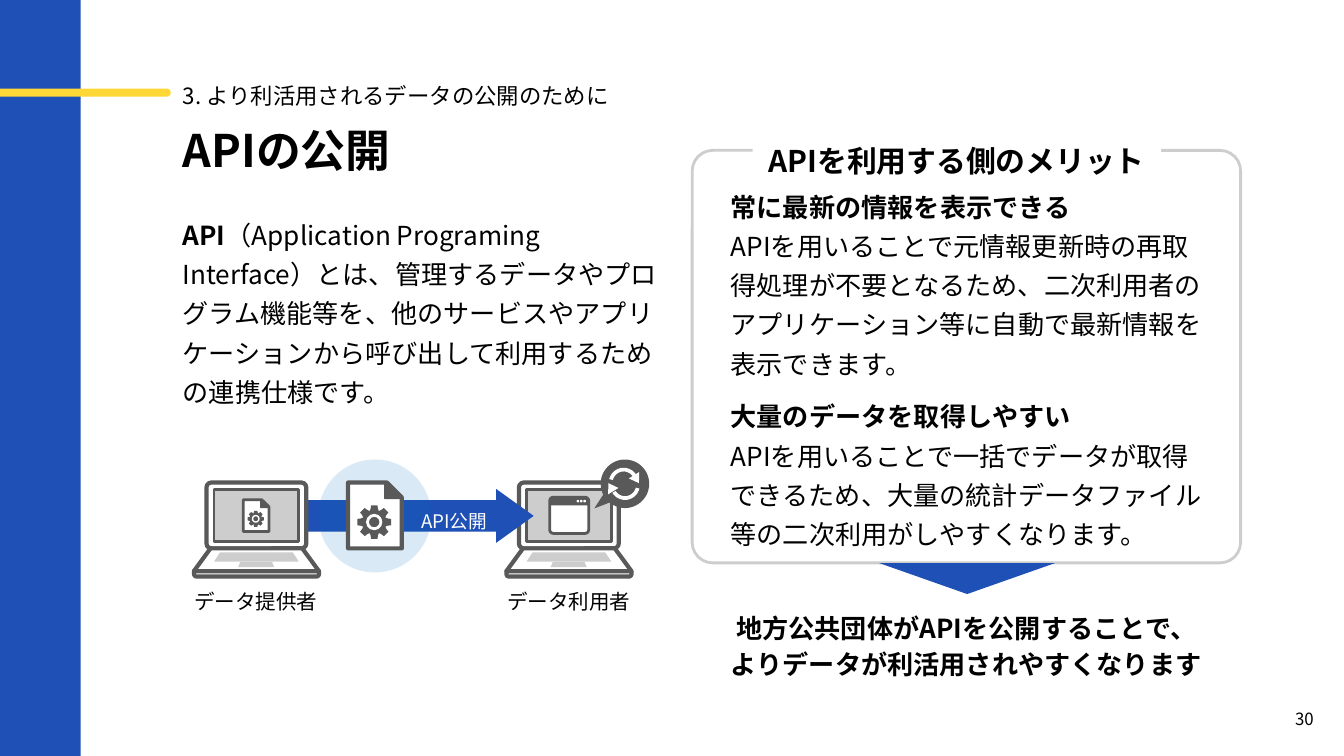
from lxml import etree
from pptx import Presentation
from pptx.dml.color import RGBColor
from pptx.enum import shapes, text
from pptx.oxml.ns import qn
from pptx.util import Pt

BLUE = RGBColor(0x1E, 0x50, 0xB5)
SKY = RGBColor(0x00, 0x70, 0xC0)
GOLD = RGBColor(0xFF, 0xD7, 0x37)
DARK = RGBColor(0x59, 0x59, 0x59)
GREY = RGBColor(0xCD, 0xCD, 0xCD)
WHITE = RGBColor(0xFF, 0xFF, 0xFF)
BLACK = RGBColor(0, 0, 0)
FONT = "Noto Sans CJK JP"

KIND = shapes.MSO_SHAPE
MID = text.MSO_ANCHOR.MIDDLE
LEFT, MIDX = text.PP_ALIGN.LEFT, text.PP_ALIGN.CENTER

PAGE = "30"
CHAPTER = "3. より利活用されるデータの公開のために"
TITLE = "APIの公開"
INTRO = [[("API", True), ("（Application Programing Interface）とは、管理するデータやプログラム機能等を、他のサービスやアプリケーションから呼び出して利用するための連携仕様です。", False)]]
HEAD = "APIを利用する側のメリット"
MERITS = [
    (98.2, "常に最新の情報を表示できる",
     "APIを用いることで元情報更新時の再取得処理が不要となるため、二次利用者のアプリケーション等に自動で最新情報を表示できます。"),
    (210.5, "大量のデータを取得しやすい",
     "APIを用いることで一括でデータが取得できるため、大量の統計データファイル等の二次利用がしやすくなります。"),
]
RESULT = "地方公共団体がAPIを公開することで、\vよりデータが利活用されやすくなります"
LABELS = [(88.5, 97.2, "データ提供者"), (271.3, 67, "データ利用者")]

LAPTOP = [
    (KIND.ROUNDED_RECTANGLE, (6.7, 0, 53.5, 35.3), WHITE, 2.25, [0.074], 0),
    (KIND.TRAPEZOID, (0, 35.3, 67, 12.2), WHITE, 2.25, [0.731], 0),
    (KIND.ROUND_2_SAME_RECTANGLE, (0, 47.5, 67, 2.9), WHITE, 2.25, [0.472, 0], 180),
    (KIND.TRAPEZOID, (10.8, 37.4, 45.4, 5), GREY, 0, [0.651], 0),
    (KIND.RECTANGLE, (10.8, 3.6, 45.4, 28), GREY, 1.5, [], 0),
    (KIND.TRAPEZOID, (23.7, 42.5, 19.4, 2.9), GREY, 0, [0.412], 0),
]
ARC = [121.49, 202.98, 0.126]
CYCLE = [
    (KIND.BLOCK_ARC, (326.9, 252, 15.8, 15.8), ARC, 170.5),
    (KIND.ISOSCELES_TRIANGLE, (324, 258.5, 6.5, 5), [], 328.4),
    (KIND.BLOCK_ARC, (326.2, 250.6, 15.8, 15.8), ARC, 350.5),
    (KIND.ISOSCELES_TRIANGLE, (337.7, 254.2, 6.5, 5), [], 148.3),
]

deck = Presentation()
deck.slide_width, deck.slide_height = Pt(720), Pt(405)
slide = deck.slides.add_slide(deck.slide_layouts[6])


def draw(kind, box, fill=None, width=0, adj=(), turn=0, edge=DARK):
    shape = slide.shapes.add_shape(kind, *[Pt(v) for v in box])
    shape.shadow.inherit = False
    shape.rotation = turn
    for i, value in enumerate(adj):
        shape.adjustments[i] = value
    if fill is None:
        shape.fill.background()
    else:
        shape.fill.solid()
        shape.fill.fore_color.rgb = fill
    if width:
        shape.line.color.rgb = edge
        shape.line.width = Pt(width)
    else:
        shape.line.fill.background()
    return shape


def write(box, paras, size, bold=False, align=LEFT, space=None,
          anchor=text.MSO_ANCHOR.TOP, color=BLACK, fill=None):
    label = slide.shapes.add_textbox(*[Pt(v) for v in box])
    if fill is not None:
        label.fill.solid()
        label.fill.fore_color.rgb = fill
    frame = label.text_frame
    frame.word_wrap = True
    frame.vertical_anchor = anchor
    frame.margin_left = frame.margin_right = 0
    frame.margin_top = frame.margin_bottom = 0
    if isinstance(paras, str):
        paras = [paras]
    for i, words in enumerate(paras):
        para = frame.add_paragraph() if i else frame.paragraphs[0]
        para.alignment = align
        if space:
            para.line_spacing = space
        font = para.font
        font.name, font.size = FONT, Pt(size)
        font.color.rgb = color
        if isinstance(words, str):
            font.bold = bold
            para.text = words
        else:
            for part, heavy in words:
                run = para.add_run()
                run.text = part
                run.font.bold = heavy
        base = para._p.pPr.find(qn("a:defRPr"))
        etree.SubElement(base, qn("a:ea"), typeface=FONT)


def laptop(left, top=258.5):
    for kind, (x, y, w, h), fill, width, adj, turn in LAPTOP:
        draw(kind, (left + x, top + y, w, h), fill, width, adj, turn)


def sheet(left, top, scale, lines):
    def place(x, y, w, h):
        return left + x * scale, top + y * scale, w * scale, h * scale

    draw(KIND.SNIP_1_RECTANGLE, place(0, 0, 28.8, 35.3), WHITE, lines[0], [0.278])
    draw(KIND.RIGHT_TRIANGLE, place(19.6, 0, 8.6, 8.6), DARK, lines[1])
    for turn in (0, 45):
        draw(KIND.PLAQUE, place(5, 12.2, 18, 18), DARK, 0, [0.405], turn)
    draw(KIND.OVAL, place(10.4, 17.6, 7.2, 7.2), DARK, lines[2], edge=WHITE)


draw(KIND.RECTANGLE, (0, 0, 43.2, 405), BLUE)
draw(KIND.ROUNDED_RECTANGLE, (-8, 47.5, 99.5, 4.3), GOLD, 0, [0.5])

laptop(271.3)
draw(KIND.OVAL, (321.8, 246.2, 26, 26), DARK)
draw(KIND.ISOSCELES_TRIANGLE, (319, 264.2, 6.5, 10), DARK, turn=231.1)
draw(KIND.ROUNDED_RECTANGLE, (294.5, 266.4, 20.9, 19.4), WHITE, 1.5, [0.099])
draw(KIND.ROUND_2_SAME_RECTANGLE, (294.5, 266.4, 20.9, 4.3), DARK, 0, [0.458, 0])
for i in range(3):
    draw(KIND.OVAL, (308.9 + 1.8 * i, 267.8, 1.4, 1.4), WHITE)

draw(KIND.RIGHT_ARROW, (157, 262, 128.9, 28.8), BLUE, 0, [0.589, 0.696])
halo = draw(KIND.OVAL, (170.6, 246.2, 60.5, 60.5), SKY)
tint = halo._element.spPr.find(qn("a:solidFill"))[0]
etree.SubElement(tint, qn("a:alpha"), val="15000")
draw(KIND.ROUNDED_RECTANGLE, (370.8, 80.6, 293.8, 221), None, 1.5, [0.05], edge=GREY)

laptop(103.9)
write((221.4, 267.1, 44, 18), "API公開", 10, align=MIDX, space=1.5, anchor=MID, color=WHITE)
sheet(186.5, 258.5, 1, (2.25, 0.75, 1.5))
sheet(130.3, 267.8, 0.48, (1.5, 0.75, 0.75))
for kind, box, adj, turn in CYCLE:
    draw(kind, box, WHITE, 0, adj, turn)
for left, width, words in LABELS:
    write((left, 315.4, width, 13.7), words, 11, align=MIDX)

write((97.9, 39.6, 566.6, 19.4), CHAPTER, 12, space=1.25, anchor=MID)
write((97.9, 65.5, 254.9, 28.8), TITLE, 24, True)
write((97.9, 113.3, 254.9, 105.8), INTRO, 14, space=1.25)
write((403.2, 71.5, 218.9, 24.5), HEAD, 16, True, MIDX, 1.25, fill=WHITE)
for top, head, body in MERITS:
    write((391.4, top, 252.7, 85), [[(head, True)], [(body, False)]], 14, space=1.25)
draw(KIND.RIGHT_ARROW, (509.8, 262.8, 16.6, 94.3), BLUE, 0, [0.589, 1], 90)
write((385.2, 325.4, 265, 38.9), RESULT, 14, True, MIDX, 1.15, fill=WHITE)
write((683.3, 369.4, 31, 31), PAGE, 9, align=MIDX, anchor=MID)

deck.save("out.pptx")
